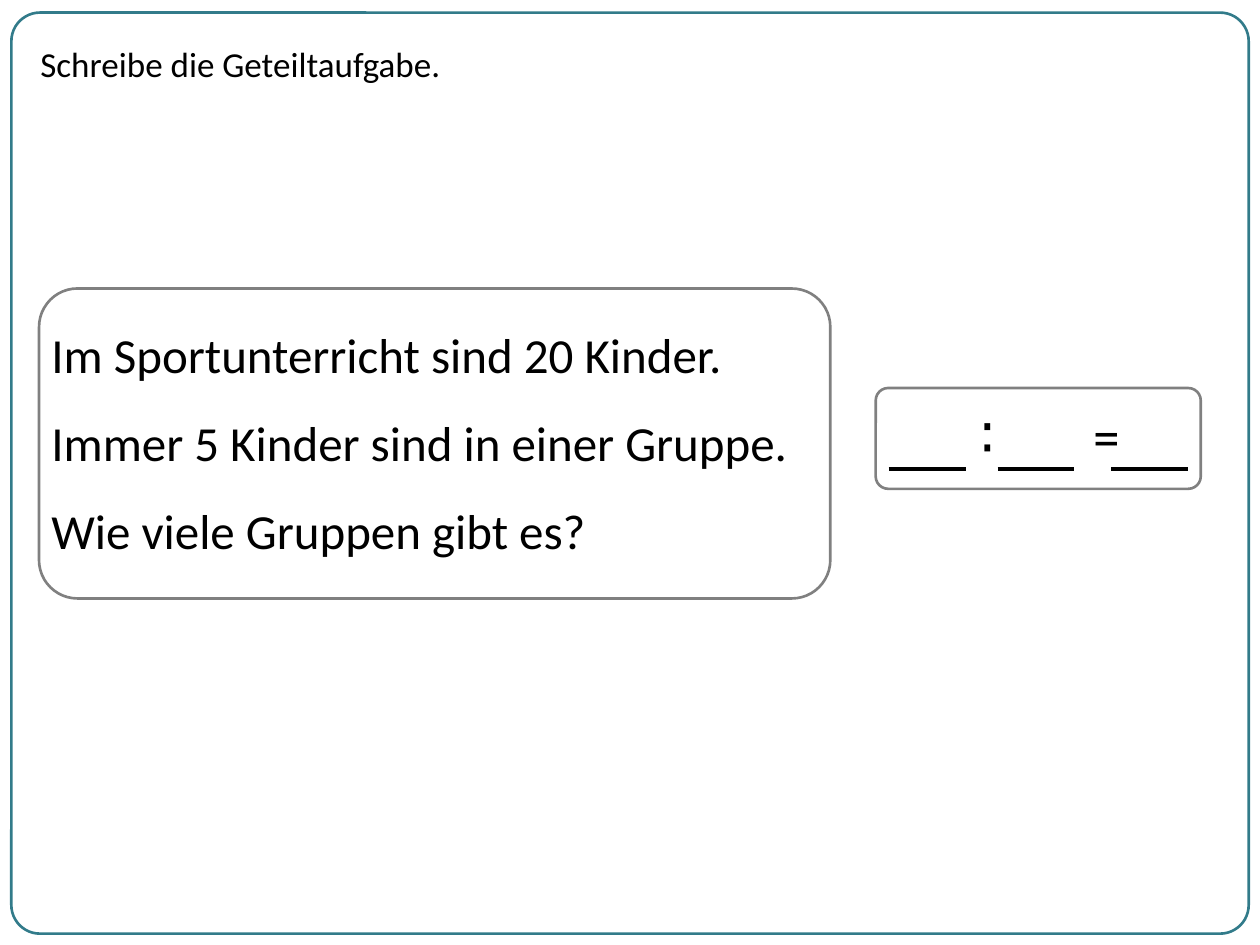
from lxml import etree
from pptx import Presentation
from pptx.dml.color import RGBColor
from pptx.enum.shapes import MSO_CONNECTOR, MSO_SHAPE
from pptx.enum.text import MSO_ANCHOR, MSO_AUTO_SIZE, PP_ALIGN
from pptx.oxml.ns import qn
from pptx.util import Inches, Pt

ROUNDED = MSO_SHAPE.ROUNDED_RECTANGLE
STRAIGHT = MSO_CONNECTOR.STRAIGHT
TOP, MIDDLE = MSO_ANCHOR.TOP, MSO_ANCHOR.MIDDLE
LEFT, CENTER = PP_ALIGN.LEFT, PP_ALIGN.CENTER
NO_AUTOFIT = MSO_AUTO_SIZE.NONE

WIDTH, HEIGHT = 10, 7.5
FONT = "Calibri"
BLACK, GRAY, TEAL = "000000", "808080", "327B8A"

INSTRUCTION = "Schreibe die Geteiltaufgabe."
STORY = [
    "Im Sportunterricht sind\u00a020 Kinder.",
    "Immer 5 Kinder sind in einer Gruppe. \vWie viele Gruppen gibt es?",
]
SIGNS = ["", "", "∶", "", "", "=", "", ""]


def color(value):
    return RGBColor.from_string(value)


def place(box):
    return [Inches(length) for length in box]


def style(paragraph, size, align=LEFT):
    paragraph.alignment = align
    paragraph.font.name = FONT
    paragraph.font.size = Pt(size)
    paragraph.font.color.rgb = color(BLACK)


def add_frame(slide, box, outline, rounding):
    frame = slide.shapes.add_shape(ROUNDED, *place(box))
    frame.adjustments[0] = rounding
    frame.shadow.inherit = False
    frame.fill.background()
    frame.line.color.rgb = color(outline)
    frame.line.width = Pt(1.5)


def add_instruction(slide, box):
    title = slide.shapes.title
    title.left, title.top, title.width, title.height = place(box)
    title.text_frame.text = INSTRUCTION
    title.text_frame.auto_size = NO_AUTOFIT
    title.text_frame.vertical_anchor = TOP
    style(title.text_frame.paragraphs[0], 20)


def add_story(slide, box):
    left, top, width, height = box
    add_frame(slide, box, GRAY, 0.124)
    text_box = (left, top, width + 0.15, height - 0.3)
    story = slide.shapes.add_textbox(*place(text_box)).text_frame
    story.word_wrap = True
    story.text = "\n".join(STORY)
    for paragraph in story.paragraphs:
        style(paragraph, 28)
        paragraph.line_spacing = 1.5


def add_blank(slide, left, baseline, width):
    ends = place((left, baseline, left + width, baseline))
    blank = slide.shapes.add_connector(STRAIGHT, *ends)
    blank.line.color.rgb = color(BLACK)
    blank.line.width = Pt(2.25)
    etree.SubElement(blank._element.spPr, qn("a:effectLst"))


def add_equation(slide, box):
    left, top, width, height = box
    grid_box = (left + 0.14, top + 0.08, width - 0.2, height - 0.17)
    grid = slide.shapes.add_table(1, len(SIGNS), *place(grid_box)).table
    grid.first_row = grid.horz_banding = False
    for cell, sign in zip(grid.iter_cells(), SIGNS):
        cell.fill.background()
        cell.vertical_anchor = MIDDLE
        if sign:
            cell.text = sign
            style(cell.text_frame.paragraphs[0], 32, CENTER)
    add_frame(slide, box, GRAY, 0.124)
    for share in (0.04, 0.375, 0.725):
        add_blank(slide, left + share * width, top + 0.8 * height, 0.61)


def main():
    presentation = Presentation()
    presentation.slide_width = Inches(WIDTH)
    presentation.slide_height = Inches(HEIGHT)
    slide = presentation.slides.add_slide(presentation.slide_layouts[5])
    add_frame(slide, (0.09, 0.1, WIDTH - 0.18, HEIGHT - 0.19), TEAL, 0.031)
    add_instruction(slide, (0.22, 0.29, 4.25, 0.44))
    add_story(slide, (0.31, 2.29, 6.28, 2.46))
    add_equation(slide, (6.95, 3.08, 2.58, 0.8))
    presentation.save("out.pptx")


if __name__ == "__main__":
    main()
